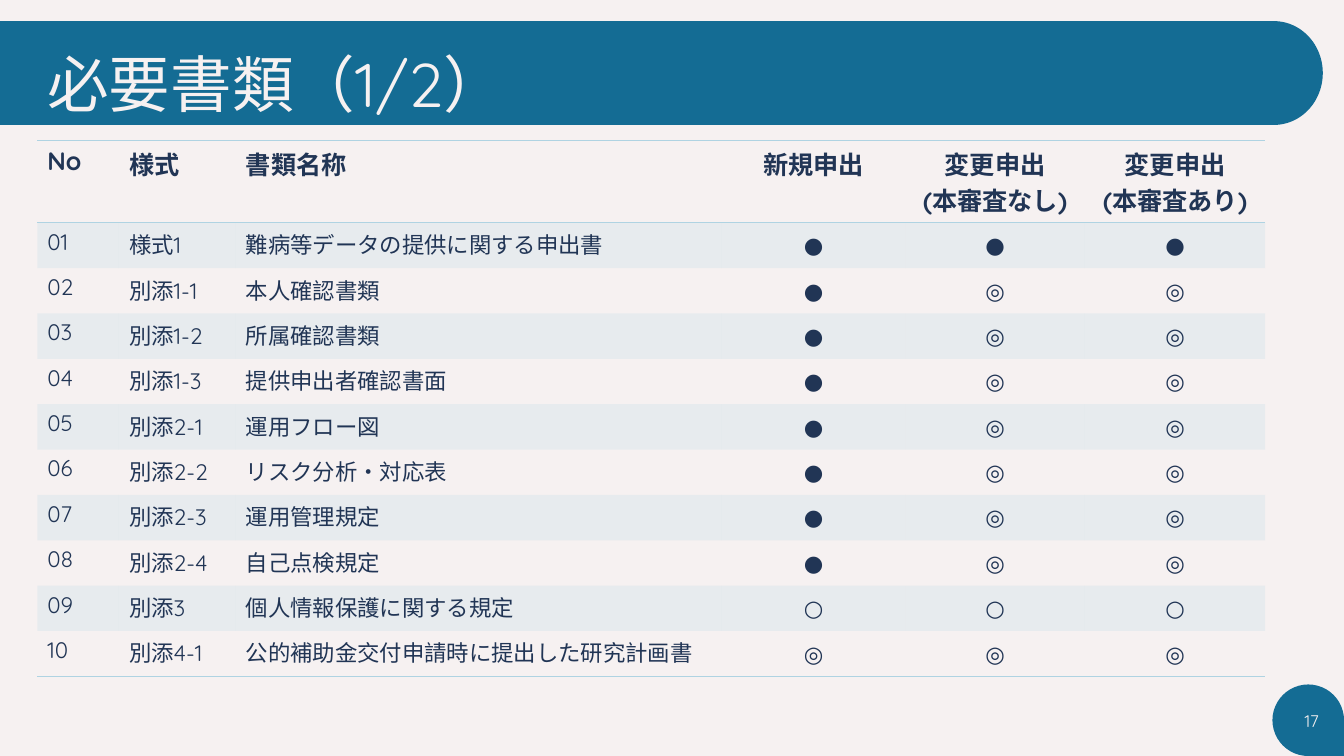
"""Build the slide listing the required application documents."""
from lxml import etree
from pptx import Presentation
from pptx.dml.color import RGBColor
from pptx.enum.shapes import MSO_SHAPE as SHAPE
from pptx.enum.text import MSO_ANCHOR as ANCHOR, PP_ALIGN as ALIGN
from pptx.oxml.ns import qn
from pptx.util import Inches, Pt

TITLE = "必要書類（1/2）"
PAGE_NUMBER = "17"
HEADINGS = ("No", "様式", "書類名称", "新規申出",
            "変更申出\n(本審査なし)", "変更申出\n(本審査あり)")
DOCUMENTS = [
    ("様式1", "難病等データの提供に関する申出書", "●●●"),
    ("別添1-1", "本人確認書類", "●◎◎"),
    ("別添1-2", "所属確認書類", "●◎◎"),
    ("別添1-3", "提供申出者確認書面", "●◎◎"),
    ("別添2-1", "運用フロー図", "●◎◎"),
    ("別添2-2", "リスク分析・対応表", "●◎◎"),
    ("別添2-3", "運用管理規定", "●◎◎"),
    ("別添2-4", "自己点検規定", "●◎◎"),
    ("別添3", "個人情報保護に関する規定", "○○○"),
    ("別添4-1", "公的補助金交付申請時に提出した研究計画書", "◎◎◎"),
]
COLUMN_WIDTHS = (0.81, 1.16, 4.82, 1.82, 1.78, 1.79)
HEADING_HEIGHT, ROW_HEIGHT = 0.82, 0.45
FIRST_MARK_COLUMN = 3

FONT = "Quicksand"
CREAM = RGBColor(0xF6, 0xF1, 0xF1)
TEAL = RGBColor(0x14, 0x6C, 0x94)
SKY = RGBColor(0xAF, 0xD3, 0xE2)
NAVY = RGBColor(0x21, 0x35, 0x55)
PLAIN_TABLE_STYLE = "{2D5ABB26-0587-4C30-8999-92F81FD0307C}"


def write(frame, text, size, color, align=ALIGN.LEFT, bold=False):
    frame.text = text
    for paragraph in frame.paragraphs:
        paragraph.alignment = align
        for run in paragraph.runs:
            run.font.name = FONT
            run.font.size = Pt(size)
            run.font.bold = bold
            run.font.color.rgb = color


def add_block(slide, kind, *box):
    block = slide.shapes.add_shape(kind, *map(Inches, box))
    block.shadow.inherit = False
    block.fill.solid()
    block.fill.fore_color.rgb = TEAL
    block.line.fill.background()
    return block


def add_text(slide, box, anchor, *style):
    frame = slide.shapes.add_textbox(*map(Inches, box)).text_frame
    frame.word_wrap = True
    frame.vertical_anchor = anchor
    write(frame, *style)
    return frame


def add_rules(cell, edges):
    properties = cell._tc.get_or_add_tcPr()
    for position, edge in enumerate(edges):
        rule = etree.Element(qn(f"a:{edge}"), w=str(Pt(1)))
        fill = etree.SubElement(rule, qn("a:solidFill"))
        etree.SubElement(fill, qn("a:srgbClr"), val=str(SKY))
        properties.insert(position, rule)


def tint(cell):
    cell.fill.solid()
    cell.fill.fore_color.rgb = SKY
    color = cell._tc.tcPr.find(f".//{qn('a:srgbClr')}")
    etree.SubElement(color, qn("a:alpha"), val="20000")


def add_documents(slide):
    rows = [HEADINGS] + [(f"{number:02}", form, name, *marks)
                         for number, (form, name, marks) in enumerate(DOCUMENTS, 1)]
    heights = [HEADING_HEIGHT] + [ROW_HEIGHT] * len(DOCUMENTS)
    table = slide.shapes.add_table(
        len(rows), len(HEADINGS), Inches(0.37), Inches(1.39),
        Inches(sum(COLUMN_WIDTHS)), Inches(sum(heights))).table
    table._tbl.tblPr.find(qn("a:tableStyleId")).text = PLAIN_TABLE_STYLE
    for column, width in zip(table.columns, COLUMN_WIDTHS):
        column.width = Inches(width)
    for row, height in zip(table.rows, heights):
        row.height = Inches(height)

    for r, row in enumerate(rows):
        heading = r == 0
        for c, text in enumerate(row):
            cell = table.cell(r, c)
            is_mark = c >= FIRST_MARK_COLUMN
            write(cell.text_frame, text, 18 if heading else 16, NAVY,
                  ALIGN.CENTER if is_mark else ALIGN.LEFT, heading)
            if is_mark and not heading:
                cell.vertical_anchor = ANCHOR.MIDDLE
            if r % 2:
                tint(cell)
            else:
                cell.fill.background()
            if heading:
                add_rules(cell, ("lnT", "lnB"))
            elif r == len(DOCUMENTS):
                add_rules(cell, ("lnB",))


def main():
    deck = Presentation()
    deck.slide_width, deck.slide_height = Inches(13.33), Inches(7.5)
    slide = deck.slides.add_slide(deck.slide_layouts[6])
    slide.background.fill.solid()
    slide.background.fill.fore_color.rgb = CREAM

    page_badge = add_block(slide, SHAPE.TEAR, 12.62, 6.79, 0.71, 0.71)
    page_badge.rotation = 90
    add_block(slide, SHAPE.FLOWCHART_CONNECTOR, 12.15, 0.21, 0.97, 1.03)
    add_block(slide, SHAPE.RECTANGLE, 0, 0.21, 12.62, 1.03)

    title = add_text(slide, (0.37, 0.22, 11.5, 1.03), ANCHOR.BOTTOM, TITLE, 44, CREAM)
    title.paragraphs[0].line_spacing = 0.9
    add_documents(slide)
    add_text(slide, (12.68, 6.95, 0.5, 0.4), ANCHOR.MIDDLE,
             PAGE_NUMBER, 12, CREAM, ALIGN.RIGHT)
    deck.save("out.pptx")


if __name__ == "__main__":
    main()
